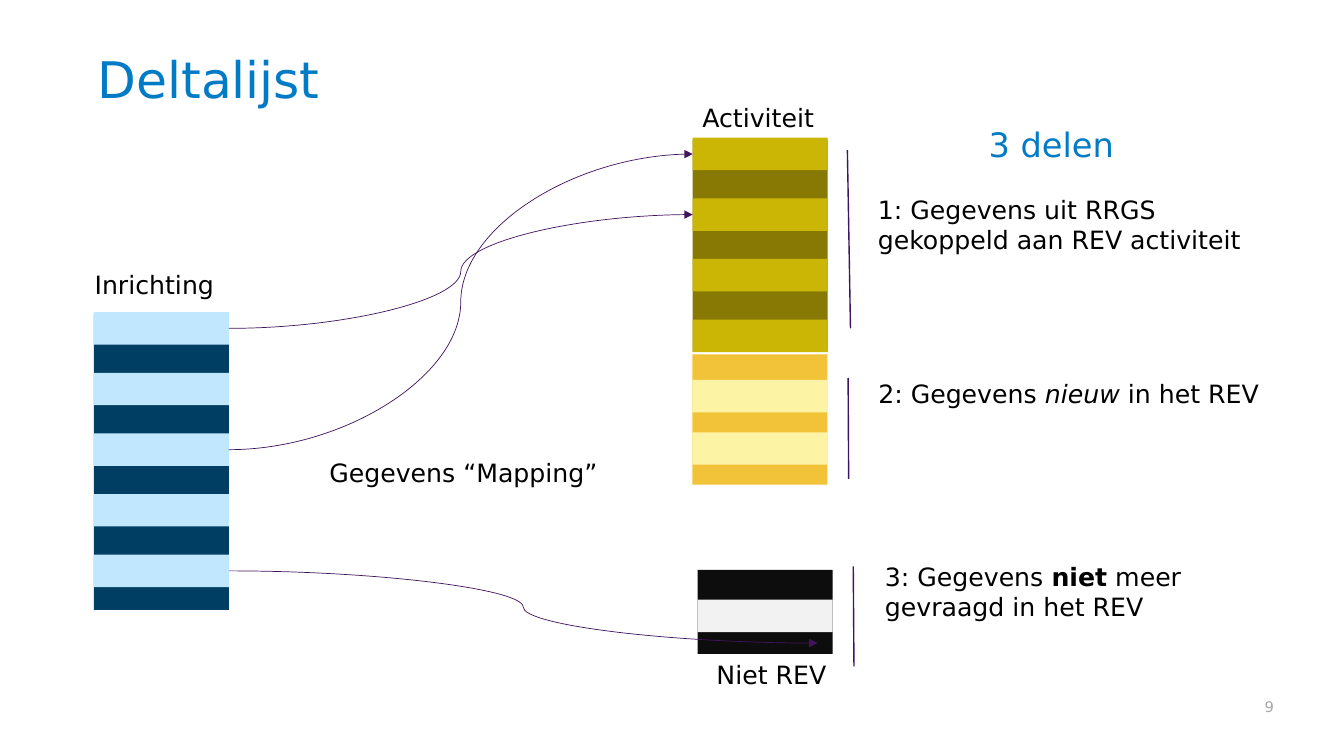
from lxml import etree
from pptx import Presentation
from pptx import util as u
from pptx.dml.color import RGBColor
from pptx.enum import shapes, text
from pptx.oxml.ns import qn

COLOURS = {
    "heading": "017BC6", "body": "000000", "number": "A6A6A6", "line": "42145F",
    "navy": "003E63", "sky": "C1E7FF", "olive": "887904", "mustard": "CCB605",
    "amber": "F2C239", "cream": "FDF3A5", "black": "0D0D0D", "grey": "F2F2F2",
}
COLUMN_WIDTH = 96.5
BAND_HEIGHT = 23.2
BAND_STEP = 43.3


class SlideBuilder:
    font = "DejaVu Sans"

    def __init__(self, slide):
        self.slide = slide

    def colour(self, name):
        return RGBColor.from_string(COLOURS[name])

    def rectangle(self, left, top, height, fill):
        shape = self.slide.shapes.add_shape(
            shapes.MSO_SHAPE.RECTANGLE, u.Pt(left), u.Pt(top), u.Pt(COLUMN_WIDTH), u.Pt(height))
        shape.shadow.inherit = False
        shape.fill.solid()
        shape.fill.fore_color.rgb = self.colour(fill)
        shape.line.fill.background()
        return shape

    def bands(self, left, top, count, step, fill):
        return [self.rectangle(left, top + index * step, BAND_HEIGHT, fill)
                for index in range(count)]

    def textbox(self, box, runs, size=18, colour="body", wrap=True, bottom=False):
        shape = self.slide.shapes.add_textbox(*(u.Pt(value) for value in box))
        frame = shape.text_frame
        frame.word_wrap = wrap
        if bottom:
            frame.vertical_anchor = text.MSO_ANCHOR.BOTTOM
        else:
            frame.auto_size = text.MSO_AUTO_SIZE.SHAPE_TO_FIT_TEXT
        paragraph = frame.paragraphs[0]
        for words, style in runs:
            run = paragraph.add_run()
            run.text = words
            run.font.name = self.font
            run.font.size = u.Pt(size)
            run.font.color.rgb = self.colour(colour)
            run.font.bold = style == "bold"
            run.font.italic = style == "italic"
        return frame

    def heading(self, box, words, size):
        frame = self.textbox(box, [(words, "")], size, "heading", bottom=True)
        frame.paragraphs[0].line_spacing = 0.9

    def page_number(self, box, number):
        frame = self.textbox(box, [(number, "")], 10.5, "number", bottom=True)
        frame.margin_right = 0
        frame.paragraphs[0].alignment = text.PP_ALIGN.RIGHT

    def connector(self, kind, start, end, width):
        line = self.slide.shapes.add_connector(kind, *(u.Pt(value) for value in start + end))
        line.line.color.rgb = self.colour("line")
        line.line.width = u.Pt(width)
        etree.SubElement(line._element.spPr, qn("a:effectLst"))
        return line

    def divider(self, start, end):
        self.connector(shapes.MSO_CONNECTOR.STRAIGHT, start, end, 1)

    def mapping(self, source, end, target=None):
        start = ((source.left + source.width) / u.Pt(1),
                 (source.top + source.height / 2) / u.Pt(1))
        if target is not None:
            end = (target.left / u.Pt(1), (target.top + target.height / 2) / u.Pt(1))
        line = self.connector(shapes.MSO_CONNECTOR.CURVE, start, end, 0.5)
        line.begin_connect(source, 3)
        if target is not None:
            line.end_connect(target, 1)
        etree.SubElement(line.line._get_or_add_ln(), qn("a:tailEnd"), type="triangle")


def main():
    presentation = Presentation()
    presentation.slide_width = u.Pt(960)
    presentation.slide_height = u.Pt(540)
    builder = SlideBuilder(presentation.slides.add_slide(presentation.slide_layouts[6]))

    builder.heading((62.6, 25.2, 222.5, 56.2), "Deltalijst", 36)
    builder.page_number((516.2, 489.6, 393.8, 25.2), "9")

    builder.rectangle(494.5, 253.2, 93, "amber")
    builder.rectangle(67, 224.6, 211, "navy")
    inrichting = builder.bands(67, 223, 5, BAND_STEP, "sky")
    builder.rectangle(494.8, 100, 151.2, "olive")
    activiteit = builder.bands(494.8, 98.4, 4, BAND_STEP, "mustard")
    builder.bands(494.5, 271.4, 2, 37.4, "cream")
    builder.rectangle(498.3, 407, 60, "black")
    builder.rectangle(498.3, 428.4, BAND_HEIGHT, "grey")

    builder.mapping(inrichting[0], None, activiteit[1])
    builder.mapping(inrichting[2], None, activiteit[0])
    builder.mapping(inrichting[4], (583.9, 459.4))

    for box, label in (
        ((228.2, 323.3, 210.2, 28.8), "Gegevens “Mapping”"),
        ((504.7, 467.3, 100, 23), "Niet REV"),
        ((60.5, 188.6, 108.7, 23), "Inrichting"),
        ((494.6, 69.8, 100.8, 23), "Activiteit"),
    ):
        builder.textbox(box, [(label, "")], wrap=False)

    for box, runs in (
        ((620, 135.4, 296, 40.3), [("1: Gegevens uit RRGS gekoppeld aan REV activiteit", "")]),
        ((620.3, 266.4, 296, 40.3),
         [("2: Gegevens ", ""), ("nieuw", "italic"), (" in het REV", "")]),
        ((625, 397.4, 245.5, 51),
         [("3: Gegevens ", ""), ("niet", "bold"), (" meer gevraagd in het REV", "")]),
    ):
        builder.textbox(box, runs)

    builder.divider((605.3, 107.2), (607.5, 234.6))
    builder.divider((605.8, 270), (606.2, 342))
    builder.divider((609.5, 404.6), (610, 476))
    builder.heading((699.1, 76.3, 138.2, 44.6), "3 delen", 24)

    presentation.save("out.pptx")


if __name__ == "__main__":
    main()
